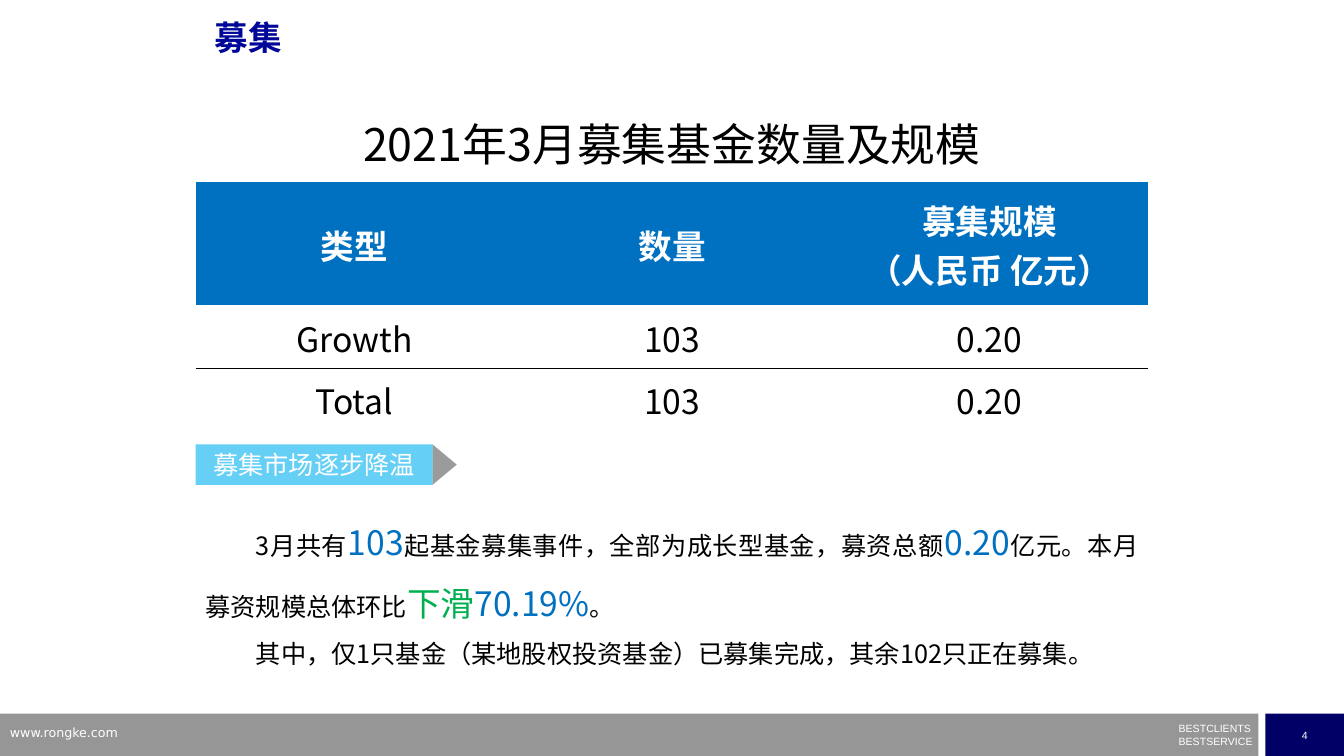
"""Build the fundraising slide with its table, callout and commentary."""
import pptx
import pptx.util
import pptx.dml.color
import pptx.enum.shapes
import pptx.enum.text
import pptx.oxml
import pptx.oxml.ns

Inches, Pt = pptx.util.Inches, pptx.util.Pt
ALIGN, ANCHOR = pptx.enum.text.PP_ALIGN, pptx.enum.text.MSO_ANCHOR
SHAPE = pptx.enum.shapes.MSO_SHAPE
CJK = "Noto Sans CJK SC"
C = {"black": "000000", "white": "FFFFFF", "grey": "969696", "navy": "000066", "title": "000798",
     "blue": "0070C0", "green": "00B050", "sky": "00B0F0", "dark": "595959"}


def style(font, size, color, name=CJK, bold=False):
    font.size, font.name, font.bold = Pt(size), name, bold
    font.color.rgb = pptx.dml.color.RGBColor.from_string(C[color])


def add_block(kind, box, color, alpha=None):
    sp = s.shapes.add_shape(kind, *map(Inches, box))
    sp.shadow.inherit = False
    sp.line.fill.background()
    sp.fill.solid()
    sp.fill.fore_color.rgb = pptx.dml.color.RGBColor.from_string(C[color])
    if alpha:
        clr = sp.fill._xPr.find(".//" + pptx.oxml.ns.qn("a:srgbClr"))
        clr.append(pptx.oxml.parse_xml(f'<a:alpha {pptx.oxml.ns.nsdecls("a")} val="{alpha * 1000}"/>'))
    tf = sp.text_frame
    tf.vertical_anchor = ANCHOR.MIDDLE
    tf.paragraphs[0].alignment = ALIGN.CENTER
    return sp


prs = pptx.Presentation()
prs.slide_width, prs.slide_height = Inches(13.33), Inches(7.5)
s = prs.slides.add_slide(prs.slide_layouts[5])

title = s.shapes.title
title.left, title.top, title.width, title.height = map(Inches, (2.03, 0.16, 9, 0.7))
title.text_frame.vertical_anchor = ANCHOR.TOP
p = title.text_frame.paragraphs[0]
p.text, p.alignment, p.line_spacing = "募集", ALIGN.LEFT, 0.9
style(p.font, 24, "title", "Arial", True)

add_block(SHAPE.RECTANGLE, (0, 7.08, 12.48, 0.42), "grey")
page = add_block(SHAPE.RECTANGLE, (12.55, 7.08, 0.78, 0.42), "navy")
page.text_frame.word_wrap = False
p = page.text_frame.paragraphs[0]
p.text = "4"
style(p.font, 7.5, "white", "Arial")

tf = s.shapes.add_textbox(*map(Inches, (11.69, 7.22, 0.76, 0.2))).text_frame
tf.word_wrap = True
tf.margin_left = tf.margin_right = tf.margin_top = tf.margin_bottom = 0
tf.text = "BESTCLIENTS\nBESTSERVICE"
for p in tf.paragraphs:
    p.line_spacing = 0.5
    style(p.font, 7.5, "white", "Arial")
tf.paragraphs[1].space_before = Pt(4.3)

tf = s.shapes.add_textbox(*map(Inches, (0, 7.14, 3.2, 0.26))).text_frame
tf.word_wrap = True
p = tf.paragraphs[0]
p.text = "www.rongke.com"
style(p.font, 9, "white", "DejaVu Sans")

commentary = [
    [("3月共有", 18, "black"), ("103", 24, "blue"),
     ("起基金募集事件，全部为成长型基金，募资总额", 18, "black"), ("0.20", 24, "blue"),
     ("亿元。本月募资规模总体环比", 18, "black"), ("下滑", 24, "green"),
     ("70.19%", 24, "blue"), ("。", 18, "black")],
    [("其中，仅1只基金（某地股权投资基金）已募集完成，其余102只正在募集。", 18, "black")],
]
tf = s.shapes.add_textbox(*map(Inches, (1.94, 4.93, 9.45, 1.71))).text_frame
tf.word_wrap = True
for i, runs in enumerate(commentary):
    p = tf.add_paragraph() if i else tf.paragraphs[0]
    p.alignment, p.line_spacing = ALIGN.JUSTIFY, 1.5
    pPr = p._p.get_or_add_pPr()
    pPr.set("marL", "0")
    pPr.set("indent", str(Inches(0.5)))
    for text, size, color in runs:
        r = p.add_run()
        r.text = text
        style(r.font, size, color)

callout = add_block(SHAPE.RECTANGLE, (1.94, 4.41, 2.35, 0.4), "sky", 60)
p = callout.text_frame.paragraphs[0]
p.text = "募集市场逐步降温"
style(p.font, 18, "white")
add_block(SHAPE.ISOSCELES_TRIANGLE, (4.21, 4.49, 0.4, 0.24), "dark", 60).rotation = 90

rows = [
    ["2021年3月募集基金数量及规模", "", ""],
    ["类型", "数量", "募集规模\n（人民币 亿元）"],
    ["Growth", "103", "0.20"],
    ["Total", "103", "0.20"],
]
looks = [(32, "black"), (24, "white", CJK, True), (24, "black"), (24, "black")]
heights = [0.82, 1.22, 0.63, 0.61]
borders = {2: "lnB", 3: "lnT"}
table = s.shapes.add_table(4, 3, *map(Inches, (1.94, 0.99, 9.45, 3.28))).table
table.first_row = table.horz_banding = False
table._tbl.tblPr.find(pptx.oxml.ns.qn("a:tableStyleId")).text = "{2D5ABB26-0587-4C30-8999-92F81FD0307C}"
table.cell(0, 0).merge(table.cell(0, 2))
for i, texts in enumerate(rows):
    table.rows[i].height = Inches(heights[i])
    for j, text in enumerate(texts):
        cell = table.cell(i, j)
        cell.vertical_anchor = ANCHOR.MIDDLE
        cell.margin_left = cell.margin_right = cell.margin_top = Inches(0.01)
        cell.margin_bottom = 0
        if i == 1:
            cell.fill.solid()
            cell.fill.fore_color.rgb = pptx.dml.color.RGBColor.from_string(C["blue"])
        else:
            cell.fill.background()
        p = cell.text_frame.paragraphs[0]
        p.text, p.alignment = text, ALIGN.CENTER
        style(p.font, *looks[i])
        if i in borders:
            cell._tc.get_or_add_tcPr().insert(0, pptx.oxml.parse_xml(
                f'<a:{borders[i]} {pptx.oxml.ns.nsdecls("a")} w="{Pt(1)}"><a:solidFill>'
                f'<a:srgbClr val="{C["black"]}"/></a:solidFill></a:{borders[i]}>'))

prs.save("out.pptx")
